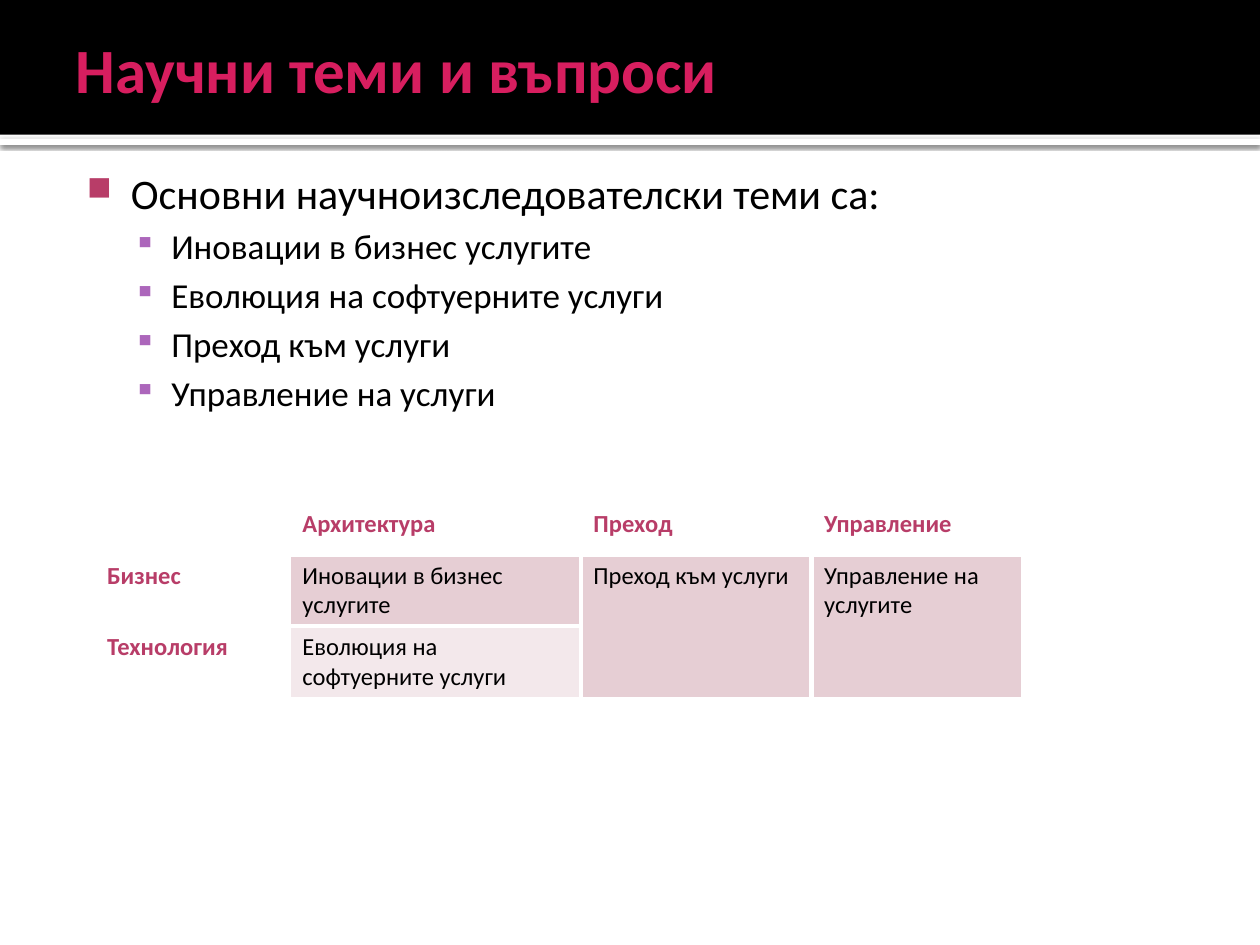
from dataclasses import dataclass

from pptx import Presentation
from pptx.dml.color import RGBColor
from pptx.enum.shapes import MSO_SHAPE
from pptx.enum.text import MSO_ANCHOR
from pptx.oxml import parse_xml
from pptx.oxml.ns import nsdecls, qn
from pptx.util import Inches, Pt


@dataclass(frozen=True)
class Theme:
    font: str = "Calibri"
    black: str = "000000"
    white: str = "FFFFFF"
    title: str = "D71E5F"
    accent: str = "B83D68"
    violet: str = "AC66BB"
    dark: str = "E6CED4"
    light: str = "F3E8EB"
    head: int = 36
    body: int = 24
    sub: int = 20
    cell: int = 14


THEME = Theme()

TOPICS = [
    "Иновации в бизнес услугите",
    "Еволюция на софтуерните услуги",
    "Преход към услуги",
    "Управление на услуги",
]
GRID = [
    ["", "Архитектура", "Преход", "Управление"],
    ["Бизнес", TOPICS[0], TOPICS[2], "Управление на услугите"],
    ["Технология", TOPICS[1], "", ""],
]
COLS = [1.55, 2.31, 1.83, 1.67]
ROWS = [0.41, 0.57, 0.57]


def color(code):
    return RGBColor.from_string(code)


def style(para, size, code, bold=False):
    for run in para.runs:
        run.font.name = THEME.font
        run.font.size = Pt(size)
        run.font.color.rgb = color(code)
        run.font.bold = bold


def add_bar(slide, top, height, code):
    bar = slide.shapes.add_shape(
        MSO_SHAPE.RECTANGLE, 0, Inches(top), Inches(10), Inches(height))
    bar.shadow.inherit = False
    bar.fill.solid()
    bar.fill.fore_color.rgb = color(code)
    bar.line.fill.background()
    return bar


def add_shade(bar):
    effects = bar.element.spPr.find(qn("a:effectLst"))
    effects.append(parse_xml(
        f'<a:outerShdw {nsdecls("a")} blurRad="{Pt(2.5)}" dist="{Pt(0.8)}" '
        f'dir="5400000" rotWithShape="0"><a:srgbClr val="{THEME.black}">'
        '<a:alpha val="60000"/></a:srgbClr></a:outerShdw>'))


def add_text(slide, box, insets):
    frame = slide.shapes.add_textbox(*map(Inches, box)).text_frame
    frame.word_wrap = True
    (frame.margin_left, frame.margin_top,
     frame.margin_right, frame.margin_bottom) = map(Inches, insets)
    return frame


def add_bullet(para, mark, code, percent, left, hang):
    props = para._p.get_or_add_pPr()
    props.set("marL", str(Inches(left)))
    props.set("indent", str(-Inches(hang)))
    for xml in (
        f'<a:buClr {nsdecls("a")}><a:srgbClr val="{code}"/></a:buClr>',
        f'<a:buSzPct {nsdecls("a")} val="{percent * 1000}"/>',
        f'<a:buChar {nsdecls("a")} char="{mark}"/>',
    ):
        props.append(parse_xml(xml))


def add_list(slide):
    frame = add_text(slide, (0.5, 1.23, 9, 2.2), (0.06, 0.1, 0.1, 0.05))
    lead = frame.paragraphs[0]
    lead.text = "Основни научноизследователски теми са:"
    style(lead, THEME.body, THEME.black)
    add_bullet(lead, "■", THEME.accent, 80, 0.48, 0.35)
    for topic in TOPICS:
        para = frame.add_paragraph()
        para.text = topic
        para.level = 1
        para.space_before = Pt(4)
        style(para, THEME.sub, THEME.black)
        add_bullet(para, "▪", THEME.violet, 90, 0.8, 0.3)


def add_edges(cell, widths):
    props = cell._tc.get_or_add_tcPr()
    for side, width in zip("LRTB", widths):
        props.append(parse_xml(
            f'<a:ln{side} {nsdecls("a")} w="{Pt(width)}"><a:solidFill>'
            f'<a:srgbClr val="{THEME.white}"/></a:solidFill></a:ln{side}>'))


def edge_widths(row, col):
    # Thick rules part the filled cells and underline the top row
    left = 3 if row and col > 1 else 1
    right = 3 if row and 0 < col < 3 else 1
    top = 3 if (row, col) == (2, 1) or row == 1 else 1
    base = 3 if row == 0 or (row, col) == (1, 1) else 1
    return left, right, top, base


def fill_cell(cell, row, col):
    label = row == 0 or col == 0
    add_edges(cell, edge_widths(row, col))
    if label:
        cell.fill.background()
    else:
        cell.fill.solid()
        cell.fill.fore_color.rgb = color(
            THEME.light if (row, col) == (2, 1) else THEME.dark)
    cell.text_frame.text = GRID[row][col]
    style(cell.text_frame.paragraphs[0], THEME.cell,
          THEME.accent if label else THEME.black, label)


def add_grid(slide):
    table = slide.shapes.add_table(
        len(ROWS), len(COLS), Inches(0.75), Inches(3.99),
        Inches(sum(COLS)), Inches(sum(ROWS))).table
    table.first_row = table.horz_banding = False
    for col, width in zip(table.columns, COLS):
        col.width = Inches(width)
    for row, height in zip(table.rows, ROWS):
        row.height = Inches(height)
    for row in range(len(ROWS)):
        for col in range(len(COLS)):
            fill_cell(table.cell(row, col), row, col)
    for col in (2, 3):
        table.cell(1, col).merge(table.cell(2, col))


def main():
    deck = Presentation()
    deck.slide_width, deck.slide_height = Inches(10), Inches(7.5)
    slide = deck.slides.add_slide(deck.slide_layouts[6])

    # Header band
    add_shade(add_bar(slide, 1.1, 0.05, THEME.white))
    add_bar(slide, 0, 1.07, THEME.black)

    # Title
    frame = add_text(slide, (0.5, 0.17, 9, 0.75), (0.1, 0.05, 0.05, 0.05))
    frame.vertical_anchor = MSO_ANCHOR.MIDDLE
    frame.text = "Научни теми и въпроси"
    style(frame.paragraphs[0], THEME.head, THEME.title, True)

    # Topics and their table
    add_list(slide)
    add_grid(slide)
    deck.save("out.pptx")


if __name__ == "__main__":
    main()
